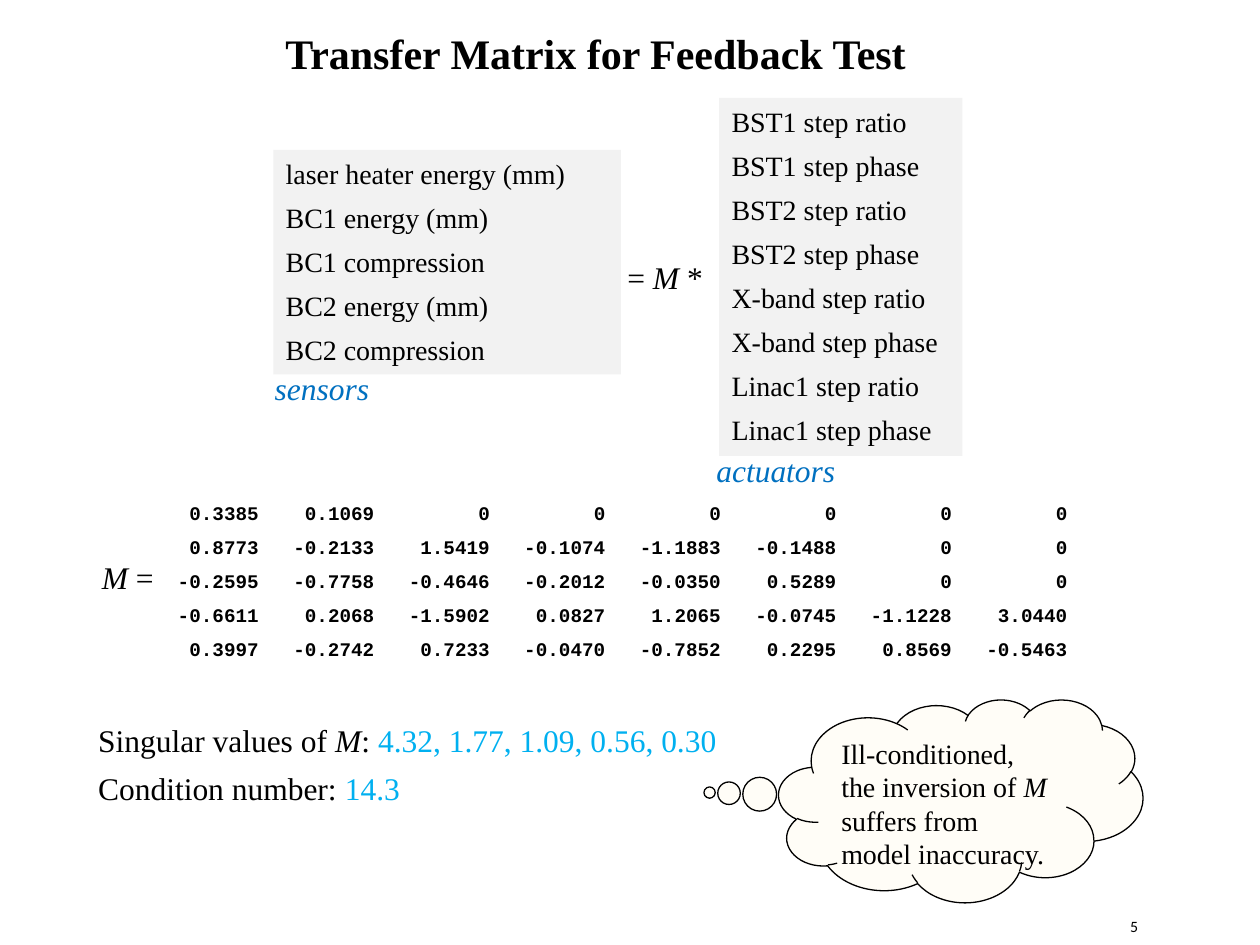
"""Build the slide on the transfer matrix for the feedback test."""
from pptx import Presentation
from pptx.dml.color import RGBColor
from pptx.enum.shapes import MSO_SHAPE as Kind
from pptx.enum.text import MSO_ANCHOR as Anchor, PP_ALIGN as Align
from pptx.oxml.ns import qn
from pptx.util import Pt
from lxml.etree import SubElement

SERIF = "Times New Roman"
BLACK, BLUE, CYAN = "000000", "0070C0", "00B0F0"
GRAY, CREAM = "F2F2F2", "FFFDF7"
M = ("M", {"italic": True})
VALUE = {"color": CYAN}

SENSORS = [
    "laser heater energy (mm)",
    "BC1 energy (mm)",
    "BC1 compression",
    "BC2 energy (mm)",
    "BC2 compression",
]
ACTUATORS = [f"{part} step {kind}"
             for part in ("BST1", "BST2", "X-band", "Linac1")
             for kind in ("ratio", "phase")]
MATRIX = [
    ["0.3385", "0.1069", "0", "0", "0", "0", "0", "0"],
    ["0.8773", "-0.2133", "1.5419", "-0.1074", "-1.1883", "-0.1488", "0", "0"],
    ["-0.2595", "-0.7758", "-0.4646", "-0.2012", "-0.0350", "0.5289", "0", "0"],
    ["-0.6611", "0.2068", "-1.5902", "0.0827", "1.2065", "-0.0745", "-1.1228", "3.0440"],
    ["0.3997", "-0.2742", "0.7233", "-0.0470", "-0.7852", "0.2295", "0.8569", "-0.5463"],
]
RESULTS = [
    ["Singular values of ", M, ": ", ("4.32, 1.77, 1.09, 0.56, 0.30", VALUE)],
    ["Condition number:", (" 14.3", VALUE)],
]
REMARK = ["Ill-conditioned, the inversion of ", M, " suffers from model inaccuracy."]
COL = 66


def rgb(code):
    return RGBColor.from_string(code)


def write(shape, lines, size, font=SERIF, color=BLACK, bold=False,
          italic=None, gap=6, tabs=()):
    frame = shape.text_frame
    frame.word_wrap = True
    frame.vertical_anchor = Anchor.TOP
    for i, line in enumerate(lines):
        para = frame.add_paragraph() if i else frame.paragraphs[0]
        para.alignment = Align.LEFT
        if i:
            para.space_before = Pt(gap)
        if tabs:
            stops = SubElement(para._p.get_or_add_pPr(), qn("a:tabLst"))
            for pos in tabs:
                SubElement(stops, qn("a:tab"), pos=str(Pt(pos)), algn="r")
        face = para.font
        face.name, face.size, face.bold, face.italic = font, Pt(size), bold, italic
        face.color.rgb = rgb(color)
        for part in [line] if isinstance(line, str) else line:
            text, style = (part, {}) if isinstance(part, str) else part
            run = para.add_run()
            run.text = text
            run.font.italic = style.get("italic")
            if "color" in style:
                run.font.color.rgb = rgb(style["color"])
    return frame


def label(slide, box, lines, size, **style):
    return write(slide.shapes.add_textbox(*map(Pt, box)), lines, size, **style)


def panel(slide, kind, box, fill, line=None):
    shape = slide.shapes.add_shape(kind, *map(Pt, box))
    shape.shadow.inherit = False
    shape.fill.solid()
    shape.fill.fore_color.rgb = rgb(fill)
    if line:
        shape.line.color.rgb = rgb(line)
        shape.line.width = Pt(0.75)
    else:
        shape.line.fill.background()
    return shape


def main():
    deck = Presentation()
    deck.slide_width, deck.slide_height = Pt(720), Pt(540)
    slide = deck.slides.add_slide(deck.slide_layouts[6])

    label(slide, (156, 12, 542, 36), ["Transfer Matrix for Feedback Test"], 24, bold=True)
    page = label(slide, (645.8, 524, 45.4, 16), ["5"], 9, font="Calibri")
    page.margin_left = page.margin_right = page.margin_top = page.margin_bottom = 0

    for name, at, box, lines in (
        ("sensors", (149.8, 207.4, 85, 28.8), (156.2, 85.7, 198.7, 128.2), SENSORS),
        ("actuators", (402.3, 254.2, 91.4, 28.8), (411, 56, 139, 204.5), ACTUATORS),
    ):
        write(panel(slide, Kind.RECTANGLE, box, GRAY), lines, 16)
        label(slide, at, [name], 18, color=BLUE, italic=True)

    label(slide, (351.4, 144, 72, 28.8), [["= ", M, " *"]], 18)
    label(slide, (51.1, 315.4, 55.4, 28.8), [[M, " ="]], 18)
    label(slide, (74.9, 283, 547.2, 100.8), ["\t" + "\t".join(row) for row in MATRIX],
          11, font="Courier New", bold=True, gap=6.25,
          tabs=[COL * (i + 1) for i in range(len(MATRIX[0]))])
    label(slide, (49, 408.2, 384.5, 56.9), RESULTS, 18)

    cloud = panel(slide, Kind.CLOUD_CALLOUT, (445, 399.6, 208.1, 115.9), CREAM, BLACK)
    cloud.adjustments[0], cloud.adjustments[1] = -0.69, -0.04
    write(cloud, [REMARK], 16).margin_right = Pt(9)

    deck.save("out.pptx")


if __name__ == "__main__":
    main()
